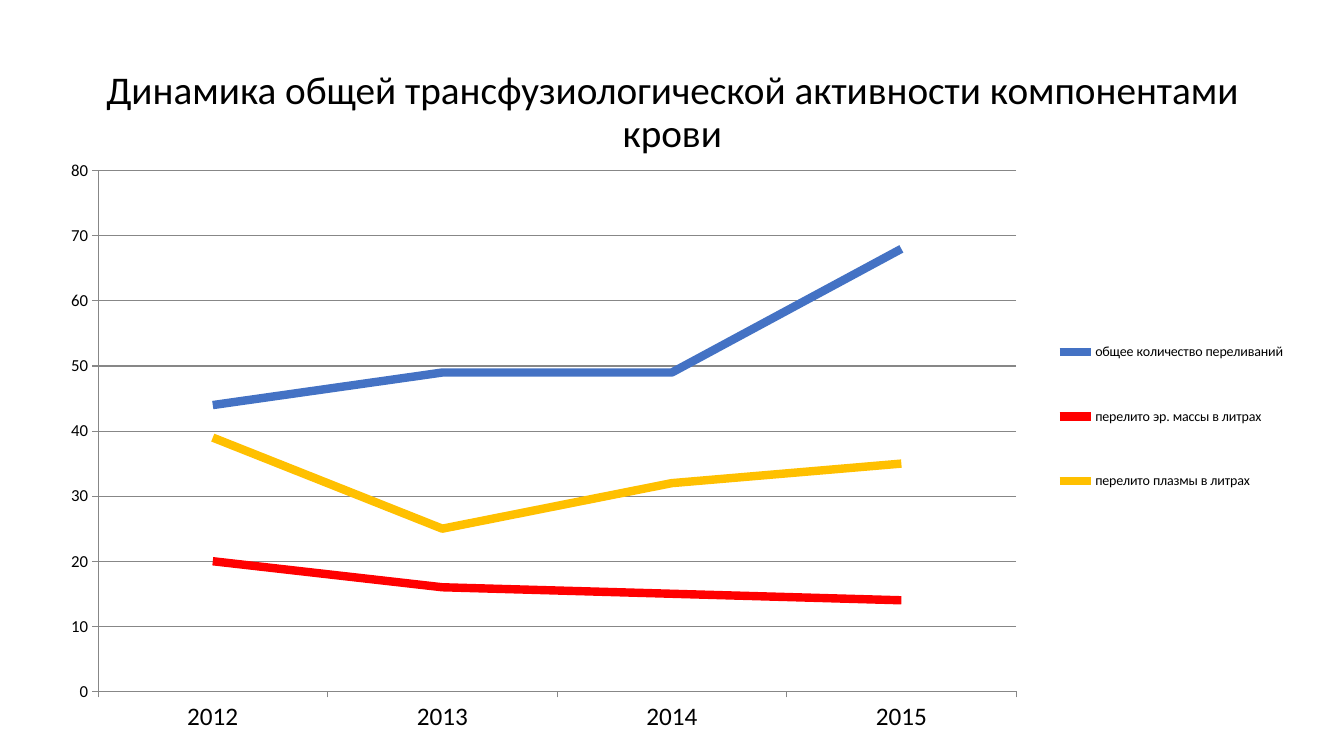
from dataclasses import dataclass

from lxml.etree import Element, SubElement
from pptx import Presentation
from pptx.chart.chart import Chart
from pptx.chart.data import CategoryChartData
from pptx.dml.color import RGBColor as Rgb
from pptx.enum.chart import XL_CHART_TYPE as ChartType
from pptx.enum.chart import XL_LEGEND_POSITION as LegendPosition
from pptx.enum.chart import XL_MARKER_STYLE as Marker
from pptx.enum.chart import XL_TICK_MARK as Tick
from pptx.enum.text import MSO_ANCHOR as Anchor
from pptx.enum.text import PP_ALIGN as Align
from pptx.oxml.ns import qn
from pptx.slide import Slide
from pptx.util import Pt


@dataclass(frozen=True)
class Theme:
    font: str = "Calibri"
    text: Rgb = Rgb(0, 0, 0)
    grid: Rgb = Rgb(0x87, 0x87, 0x87)
    title_size: float = 28
    year_size: float = 18
    value_size: float = 12
    legend_size: float = 10
    line_width: float = 6


@dataclass(frozen=True)
class Box:
    left: float
    top: float
    width: float
    height: float


@dataclass(frozen=True)
class Indicator:
    name: str
    values: tuple[int, ...]
    color: Rgb


THEME = Theme()
TITLE = "Динамика общей трансфузиологической активности компонентами крови"
YEARS = ("2012", "2013", "2014", "2015")
INDICATORS = (
    Indicator("общее количество переливаний", (44, 49, 49, 68), Rgb(0x44, 0x72, 0xC4)),
    Indicator("перелито эр. массы в литрах", (20, 16, 15, 14), Rgb(0xFF, 0, 0)),
    Indicator("перелито плазмы в литрах", (39, 25, 32, 35), Rgb(0xFF, 0xC0, 0)),
)

# Boxes on the slide in points; boxes inside the chart as fractions of it
TITLE_BOX = Box(66.24, 28.8, 828, 104.4)
CHART_BOX = Box(34.56, 105.12, 886.32, 422.64)
PLOT_AREA = Box(0.04, 0.04, 0.74, 0.88)
LEGEND_AREA = Box(0.81, 0.25, 0.19, 0.41)


def in_points(box: Box) -> tuple[Pt, Pt, Pt, Pt]:
    return Pt(box.left), Pt(box.top), Pt(box.width), Pt(box.height)


def add_title(slide: Slide) -> None:
    frame = slide.shapes.add_textbox(*in_points(TITLE_BOX)).text_frame
    frame.word_wrap = True
    frame.vertical_anchor = Anchor.MIDDLE
    frame.text = TITLE
    heading = frame.paragraphs[0]
    heading.alignment = Align.CENTER
    heading.line_spacing = 0.9
    font = heading.runs[0].font
    font.name, font.size = THEME.font, Pt(THEME.title_size)
    font.color.rgb = THEME.text


def place_part(part: Element, area: Box, index: int, inner: bool = False) -> None:
    """Fix a chart part at the given fractions of the chart."""
    for old in part.findall(qn("c:layout")):
        part.remove(old)
    layout = Element(qn("c:layout"))
    manual = SubElement(layout, qn("c:manualLayout"))
    settings = [("layoutTarget", "inner")] if inner else []
    settings += [("xMode", "edge"), ("yMode", "edge"), ("x", area.left),
                 ("y", area.top), ("w", area.width), ("h", area.height)]
    for tag, value in settings:
        SubElement(manual, qn(f"c:{tag}")).set("val", str(value))
    part.insert(index, layout)


def style_axes(chart: Chart) -> None:
    years, values = chart.category_axis, chart.value_axis
    for axis, size in ((years, THEME.year_size), (values, THEME.value_size)):
        axis.major_tick_mark = Tick.OUTSIDE
        axis.minor_tick_mark = Tick.NONE
        axis.tick_labels.font.size = Pt(size)
        axis.format.line.color.rgb = THEME.grid
        axis.format.line.width = Pt(0.75)
    years.has_major_gridlines = False
    values.has_major_gridlines = True
    values.minimum_scale, values.maximum_scale, values.major_unit = 0, 80, 10
    gridline = values.major_gridlines.format.line
    gridline.color.rgb, gridline.width = THEME.grid, Pt(0.75)


def add_activity_chart(slide: Slide) -> None:
    table = CategoryChartData()
    table.categories = YEARS
    for indicator in INDICATORS:
        table.add_series(indicator.name, indicator.values)
    chart = slide.shapes.add_chart(ChartType.LINE, *in_points(CHART_BOX), table).chart
    chart.has_title = False
    chart.font.name, chart.font.size = THEME.font, Pt(THEME.legend_size)
    chart.font.color.rgb = THEME.text
    style_axes(chart)

    # Lines
    chart.plots[0].vary_by_categories = False
    for trend, indicator in zip(chart.plots[0].series, INDICATORS):
        trend.smooth = False
        trend.marker.style = Marker.NONE
        trend.format.line.color.rgb = indicator.color
        trend.format.line.width = Pt(THEME.line_width)

    # Legend and plot placement
    chart.has_legend = True
    legend = chart.legend
    legend.position = LegendPosition.RIGHT
    legend.include_in_layout = False
    root = chart.element
    place_part(root.find(f".//{qn('c:plotArea')}"), PLOT_AREA, 0, inner=True)
    place_part(root.find(f".//{qn('c:legend')}"), LEGEND_AREA, 1)


def main() -> None:
    deck = Presentation()
    deck.slide_width, deck.slide_height = Pt(960), Pt(540)
    slide = deck.slides.add_slide(deck.slide_layouts[6])
    add_title(slide)
    add_activity_chart(slide)
    deck.save("out.pptx")


if __name__ == "__main__":
    main()
